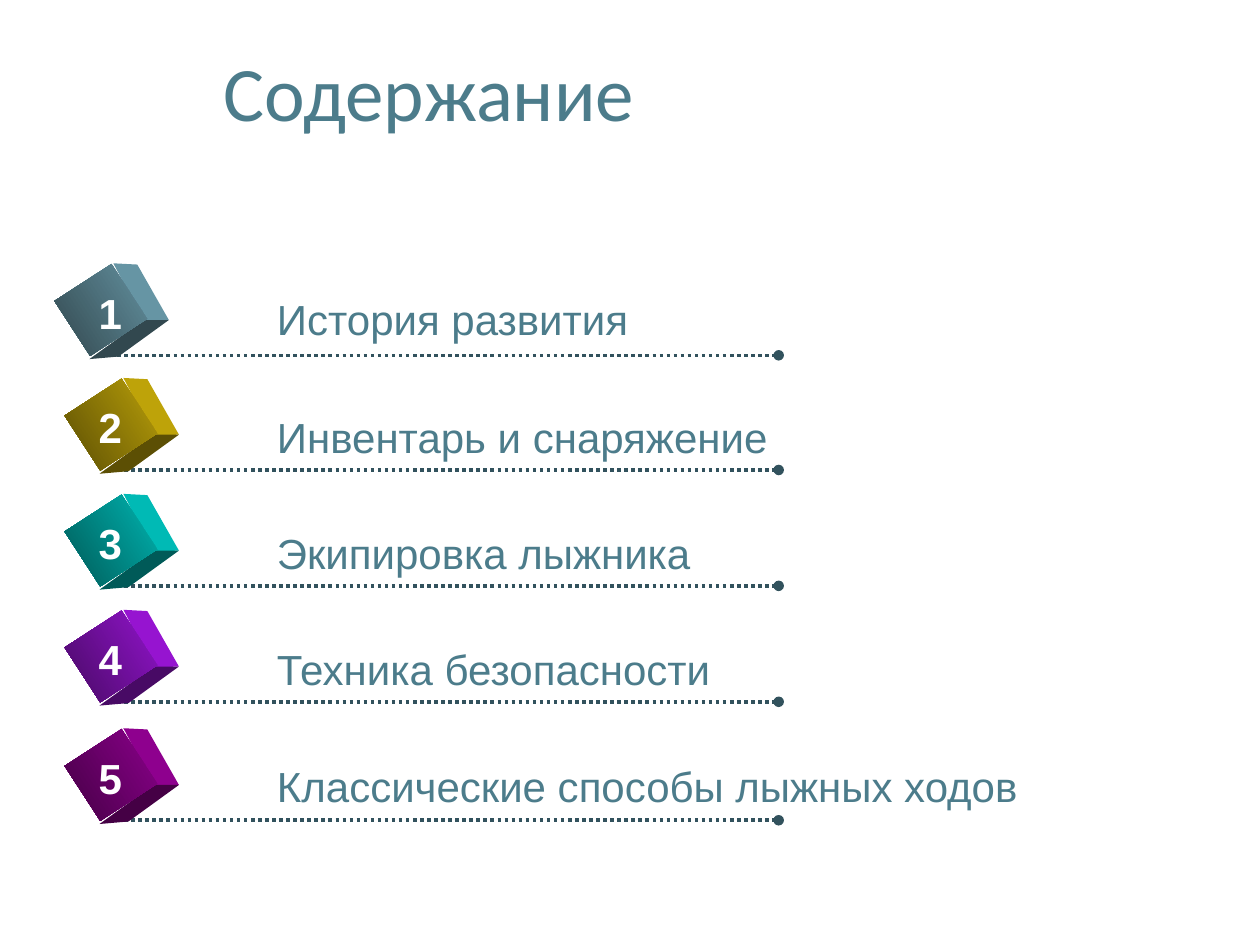
import pptx
import pptx.util
import pptx.dml.color
import pptx.enum.dml
import pptx.enum.shapes
import pptx.enum.text
from lxml import etree
from pptx.oxml.ns import qn
from pptx.util import Inches, Pt

COLORS = {"text": "4C7C8B", "rule": "32525D", "number": "FFFFFF"}
# number, label, cube colour, cube left, cube top, label top
ROWS = [
    ("1", "История развития", "6EA0B0", 0.54, 2.19, 2.28),
    ("2", "Инвентарь и снаряжение", "CCAF0A", 0.62, 3.10, 3.22),
    ("3", "Экипировка лыжника", "00C8C3", 0.62, 4.02, 4.14),
    ("4", "Техника безопасности", "A116E0", 0.62, 4.94, 5.06),
    ("5", "Классические способы лыжных ходов", "990099", 0.62, 5.88, 5.99),
]
# Cube sides: corners measured from the cube's left and top, and brightness
SIDES = [
    ([(0.36, -0.10), (0.55, -0.09), (0.80, 0.35), (0.60, 0.36)], 0.93),
    ([(0.17, 0.66), (0.40, 0.64), (0.80, 0.35), (0.60, 0.35)], 0.45),
]


def shade(color, factor):
    """Return the hex colour darkened by the factor."""
    rgb = pptx.dml.color.RGBColor.from_string(color)
    return pptx.dml.color.RGBColor(*(round(part * factor) for part in rgb))


def add_label(text, left, top, width, color, bold, align):
    box = page.shapes.add_textbox(Inches(left), Inches(top), Inches(width), Inches(0.5))
    box.text_frame.word_wrap = False
    box.text_frame.auto_size = pptx.enum.text.MSO_AUTO_SIZE.SHAPE_TO_FIT_TEXT
    para = box.text_frame.paragraphs[0]
    para.alignment = align
    span = para.add_run()
    span.text = text
    span.font.name = "Arial"
    span.font.size = Pt(24)
    span.font.bold = bold
    span.font.color.rgb = shade(color, 1)


deck = pptx.Presentation()
deck.slide_width, deck.slide_height = Inches(10), Inches(7.5)
page = deck.slides.add_slide(deck.slide_layouts[5])

title = page.shapes.title
title.left, title.top = Inches(0.15), Inches(0.05)
title.width, title.height = Inches(6.51), Inches(1.34)
title.text_frame.vertical_anchor = pptx.enum.text.MSO_ANCHOR.MIDDLE
para = title.text_frame.paragraphs[0]
para.alignment = pptx.enum.text.PP_ALIGN.CENTER
span = para.add_run()
span.text = "Содержание"
span.font.name = "Calibri"
span.font.size = Pt(44)
span.font.color.rgb = shade(COLORS["text"], 1)

for number, label, color, left, top, label_top in ROWS:
    rule_y = Inches(top + 0.63)
    rule = page.shapes.add_connector(
        pptx.enum.shapes.MSO_CONNECTOR.STRAIGHT, Inches(0.93), rule_y, Inches(6.18), rule_y)
    rule.line.color.rgb = shade(COLORS["rule"], 1)
    rule.line.width = Pt(2)
    rule.line.dash_style = pptx.enum.dml.MSO_LINE.ROUND_DOT
    etree.SubElement(rule.line._get_or_add_ln(), qn("a:tailEnd"), type="oval")
    etree.SubElement(rule._element.spPr, qn("a:effectLst"))

    for corners, brightness in SIDES:
        points = [(Inches(left + x), Inches(top + y)) for x, y in corners]
        builder = page.shapes.build_freeform(*points[0])
        builder.add_line_segments(points[1:], close=True)
        side = builder.convert_to_shape()
        side.shadow.inherit = False
        side.fill.solid()
        side.fill.fore_color.rgb = shade(color, brightness)
        side.line.fill.background()

    front = page.shapes.add_shape(
        pptx.enum.shapes.MSO_SHAPE.RECTANGLE,
        Inches(left), Inches(top), Inches(0.52), Inches(0.54))
    front.rotation = 57
    front.shadow.inherit = False
    front.line.fill.background()
    front.fill.gradient()
    front.fill.gradient_angle = 270
    for stop, position, brightness in zip(front.fill.gradient_stops, (0, 1), (0.9, 0.45)):
        stop.position = position
        stop.color.rgb = shade(color, brightness)

    add_label(number, 0.68, top + 0.04, 0.39, COLORS["number"], True,
              pptx.enum.text.PP_ALIGN.CENTER)
    add_label(label, 2.1, label_top, 6.14, COLORS["text"], False,
              pptx.enum.text.PP_ALIGN.LEFT)

deck.save("out.pptx")
